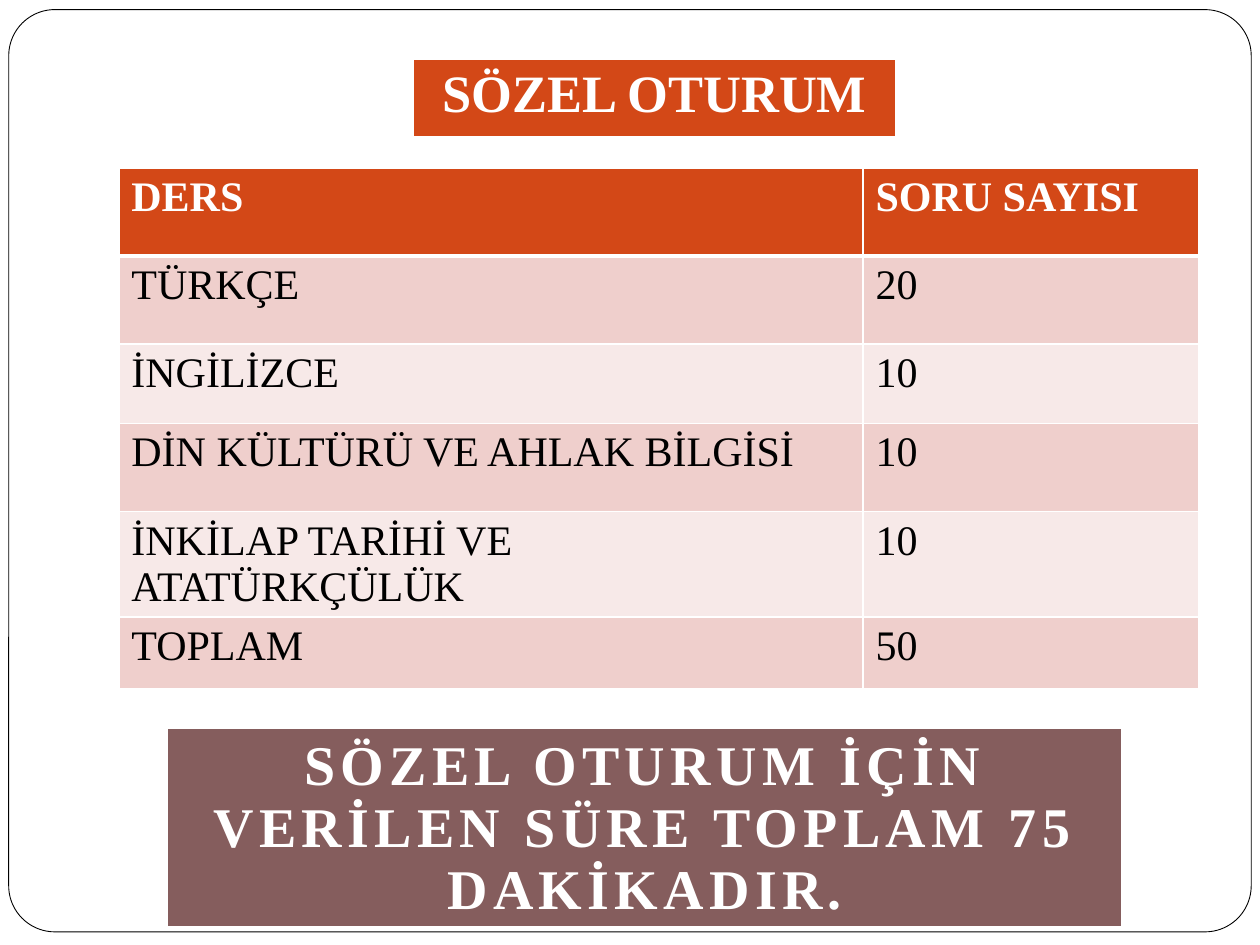
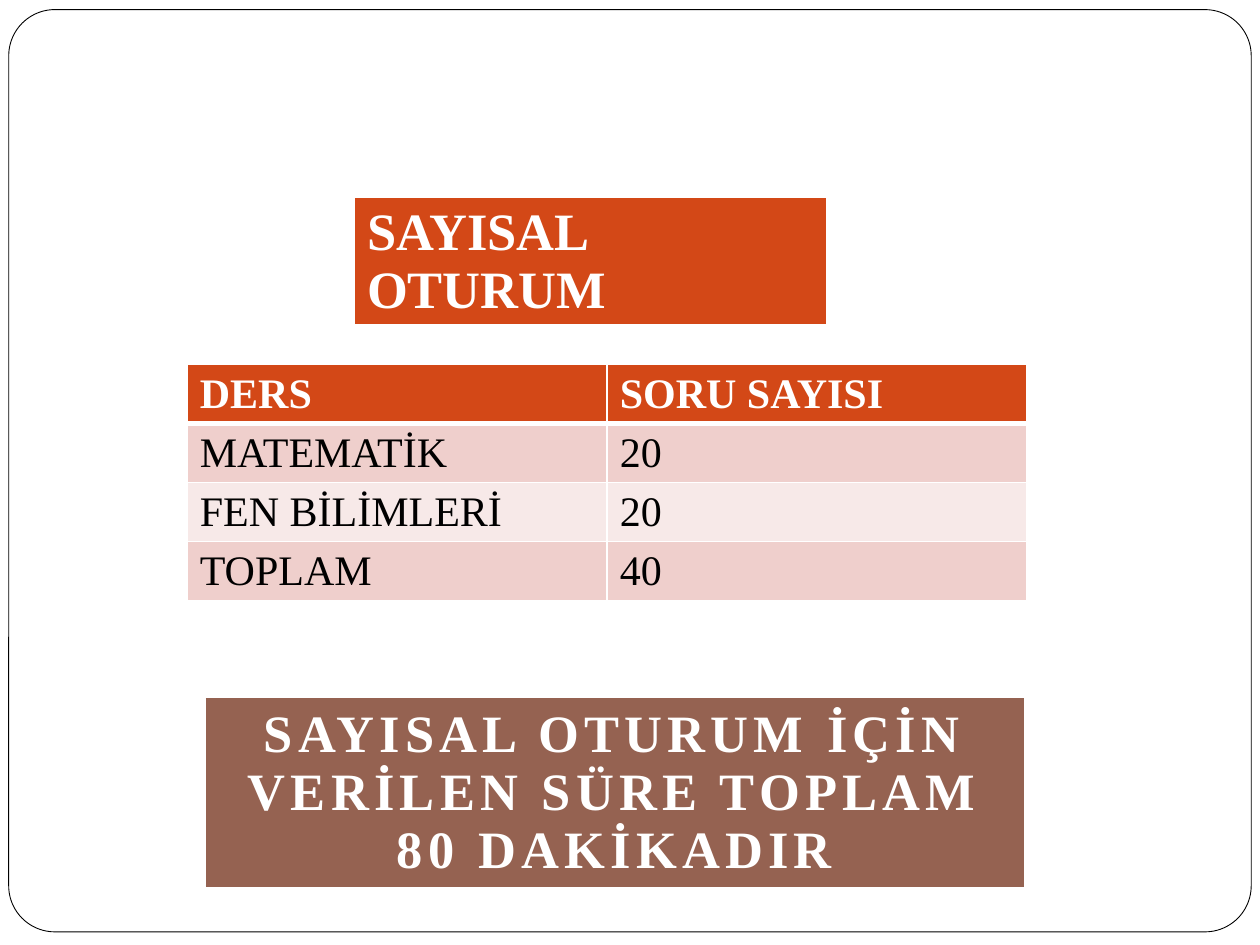
from dataclasses import dataclass

import lxml.etree
import pptx
import pptx.dml.color
import pptx.enum.shapes
import pptx.enum.text
import pptx.oxml.ns
import pptx.slide
import pptx.table
import pptx.util

Pt = pptx.util.Pt
Align = pptx.enum.text.PP_ALIGN

FONT = "Times New Roman"
COLORS = {
    "white": "FFFFFF",
    "black": "000000",
    "orange": "D34817",
    "dark_band": "EFCFCC",
    "light_band": "F7E9E8",
    "mauve": "855D5D",
    "brown": "956251",
}
HEADINGS = ("DERS", "SORU SAYISI")
THIN, THICK = 1, 3


@dataclass(frozen=True)
class TextStyle:
    size: float
    color: str = "white"
    bold: bool = True
    spacing: float = 0
    align: Align = Align.LEFT


@dataclass(frozen=True)
class CellBorder:
    color: str = "white"
    top: float = THIN
    bottom: float = THIN


@dataclass(frozen=True)
class Box:
    """A single-cell table holding one line of emphasis."""
    text: str
    left: float
    top: float
    width: float
    height: float
    fill: str
    style: TextStyle
    border: CellBorder = CellBorder(bottom=THICK)


@dataclass(frozen=True)
class LessonTable:
    left: float
    top: float
    column_widths: tuple[float, ...]
    row_heights: tuple[float, ...]
    lessons: tuple[tuple[str, str], ...]


@dataclass(frozen=True)
class Session:
    title: Box
    lesson_table: LessonTable
    duration: Box


HEADING_STYLE = TextStyle(24)
LESSON_STYLE = TextStyle(24, "black", bold=False)

SESSIONS = (
    Session(
        Box("SÖZEL OTURUM", 236.4, 34, 275.4, 45.2, "orange",
            TextStyle(30, align=Align.CENTER)),
        LessonTable(
            67.9, 95.9, (425.3, 191.8), (50.4, 50.4, 45.2, 50.4, 60.4, 41),
            (("TÜRKÇE", "20"), ("İNGİLİZCE", "10"),
             ("DİN KÜLTÜRÜ VE AHLAK BİLGİSİ", "10"),
             ("İNKİLAP TARİHİ VE ATATÜRKÇÜLÜK", "10"), ("TOPLAM", "50"))),
        Box("SÖZEL OTURUM İÇİN VERİLEN SÜRE TOPLAM 75 DAKİKADIR.",
            95.8, 416.4, 545.4, 112, "mauve",
            TextStyle(32, spacing=3, align=Align.CENTER)),
    ),
    Session(
        Box("SAYISAL OTURUM", 202.6, 112.8, 269.8, 72, "orange", TextStyle(30)),
        LessonTable(
            107, 208.2, (240, 240), (33.6,) * 4,
            (("MATEMATİK", "20"), ("FEN BİLİMLERİ", "20"), ("TOPLAM", "40"))),
        Box("SAYISAL OTURUM İÇİN VERİLEN SÜRE TOPLAM 80 DAKİKADIR",
            118, 399.4, 466.6, 107, "brown",
            TextStyle(30, spacing=3, align=Align.CENTER), CellBorder("brown")),
    ),
)


def rgb(name: str) -> pptx.dml.color.RGBColor:
    return pptx.dml.color.RGBColor.from_string(COLORS[name])


def set_border(cell: pptx.table._Cell, border: CellBorder) -> None:
    """Put the four edge lines ahead of the cell's fill, as the schema asks."""
    qn = pptx.oxml.ns.qn
    properties = cell._tc.get_or_add_tcPr()
    edges = (("lnL", THIN), ("lnR", THIN),
             ("lnT", border.top), ("lnB", border.bottom))
    for position, (tag, width) in enumerate(edges):
        line = lxml.etree.Element(qn(f"a:{tag}"), w=str(Pt(width)))
        fill = lxml.etree.SubElement(line, qn("a:solidFill"))
        lxml.etree.SubElement(fill, qn("a:srgbClr"), val=COLORS[border.color])
        properties.insert(position, line)


def fill_cell(cell: pptx.table._Cell, text: str, fill: str,
              style: TextStyle, border: CellBorder) -> None:
    cell.fill.solid()
    cell.fill.fore_color.rgb = rgb(fill)
    set_border(cell, border)
    paragraph = cell.text_frame.paragraphs[0]
    paragraph.alignment = style.align
    run = paragraph.add_run()
    run.text = text
    run.font.name = FONT
    run.font.size = Pt(style.size)
    run.font.bold = style.bold
    run.font.color.rgb = rgb(style.color)
    if style.spacing:
        run.font._element.set("spc", str(int(style.spacing * 100)))


def add_grid(slide: pptx.slide.Slide, left: float, top: float,
             widths: tuple[float, ...], heights: tuple[float, ...],
             has_header: bool) -> pptx.table.Table:
    grid = slide.shapes.add_table(
        len(heights), len(widths), Pt(left), Pt(top),
        Pt(sum(widths)), Pt(sum(heights))).table
    grid.first_row = has_header
    grid.horz_banding = False
    for column, width in zip(grid.columns, widths):
        column.width = Pt(width)
    for row, height in zip(grid.rows, heights):
        row.height = Pt(height)
    return grid


def add_box(slide: pptx.slide.Slide, box: Box) -> None:
    grid = add_grid(slide, box.left, box.top, (box.width,), (box.height,), False)
    fill_cell(grid.cell(0, 0), box.text, box.fill, box.style, box.border)


def add_lesson_table(slide: pptx.slide.Slide, table: LessonTable) -> None:
    grid = add_grid(slide, table.left, table.top,
                    table.column_widths, table.row_heights, True)
    for row, texts in enumerate((HEADINGS, *table.lessons)):
        if row == 0:
            fill, style = "orange", HEADING_STYLE
            border = CellBorder(bottom=THICK)
        else:
            fill = "dark_band" if row % 2 else "light_band"
            style = LESSON_STYLE
            border = CellBorder(top=THICK if row == 1 else THIN)
        for column, text in enumerate(texts):
            fill_cell(grid.cell(row, column), text, fill, style, border)


def add_page_frame(slide: pptx.slide.Slide) -> None:
    frame = slide.shapes.add_shape(
        pptx.enum.shapes.MSO_SHAPE.ROUNDED_RECTANGLE,
        Pt(5), Pt(5.5), Pt(710), Pt(527))
    frame.adjustments[0] = 0.05
    frame.shadow.inherit = False
    frame.fill.solid()
    frame.fill.fore_color.rgb = rgb("white")
    frame.line.color.rgb = rgb("black")
    frame.line.width = Pt(0.5)


def main() -> None:
    deck = pptx.Presentation()
    deck.slide_width, deck.slide_height = Pt(720), Pt(540)
    blank = deck.slide_layouts[6]
    for session in SESSIONS:
        slide = deck.slides.add_slide(blank)
        add_page_frame(slide)
        add_box(slide, session.title)
        add_lesson_table(slide, session.lesson_table)
        add_box(slide, session.duration)
    deck.save("out.pptx")


if __name__ == "__main__":
    main()
